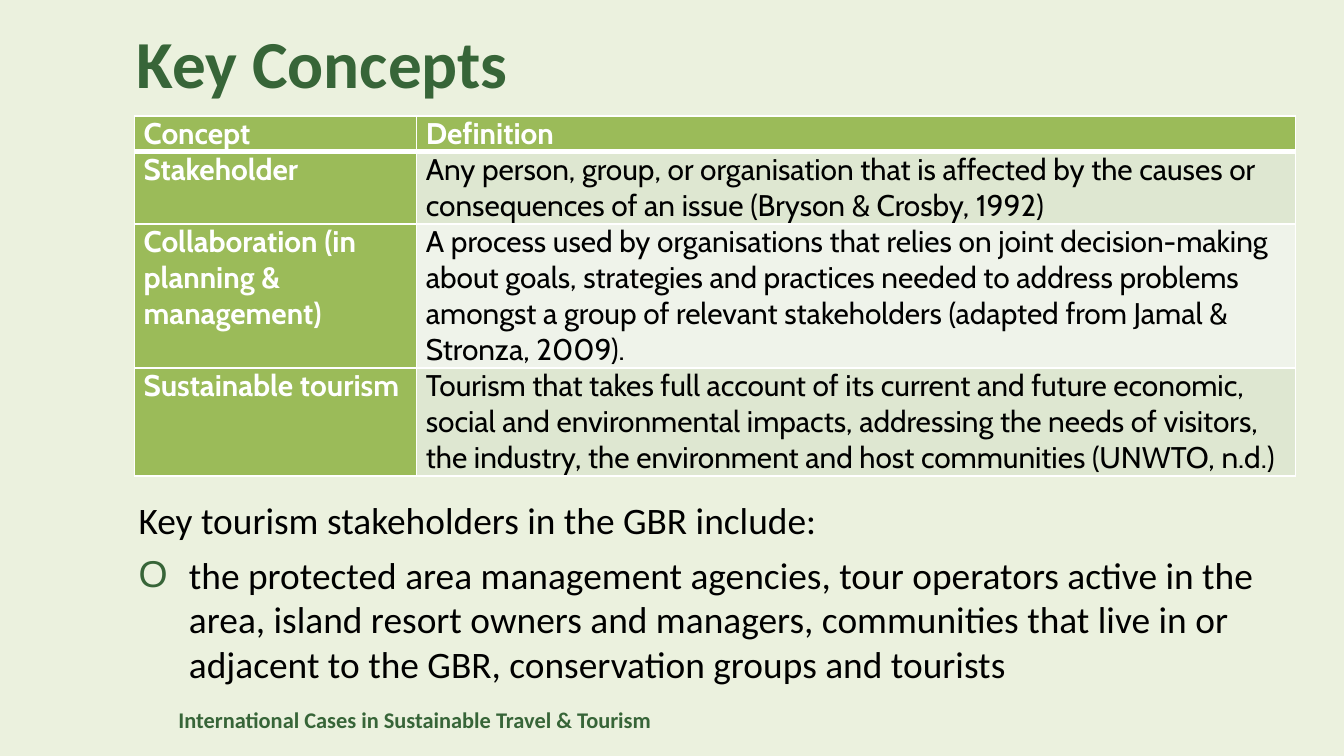
from lxml.etree import SubElement
from pptx import Presentation
from pptx.dml.color import RGBColor
from pptx.enum.text import MSO_ANCHOR, MSO_AUTO_SIZE, PP_ALIGN
from pptx.oxml.ns import qn
from pptx.util import Pt

GREEN, LIME, WHITE, BLACK = "376538", "9BBB59", "FFFFFF", "000000"
BANDS = ["DEE7D1", "EFF3EA"]
LINE = 19.3  # height of one line of table text

# Each row: lines of text, concept, definition
ROWS = [
    (1, "Concept", "Definition"),
    (2, "Stakeholder",
     "Any person, group, or organisation that is affected by the causes or "
     "consequences of an issue (Bryson & Crosby, 1992)"),
    (4, "Collaboration (in planning & management)",
     "A process used by organisations that relies on joint decision-making "
     "about goals, strategies and practices needed to address problems amongst "
     "a group of relevant stakeholders (adapted from Jamal & Stronza, 2009)."),
    (3, "Sustainable tourism",
     "Tourism that takes full account of its current and future economic, social "
     "and environmental impacts, addressing the needs of visitors, the industry, "
     "the environment and host communities (UNWTO, n.d.)"),
]
POINTS = [
    "Key tourism stakeholders in the GBR include:",
    "the protected area management agencies, tour operators active in the area, "
    "island resort owners and managers, communities that live in or adjacent to "
    "the GBR, conservation groups and tourists",
]


def paint(fill, color):
    fill.solid()
    fill.fore_color.rgb = RGBColor.from_string(color)


def style(para, size, color, bold=False, face="Calibri"):
    for run in para.runs:
        font = run.font
        font.name, font.size, font.bold = face, Pt(size), bold
        font.color.rgb = RGBColor.from_string(color)


def place(shape, box):
    shape.left, shape.top, shape.width, shape.height = [Pt(v) for v in box]


def edge(cell, side, width):
    props = cell._tc.get_or_add_tcPr()
    line = SubElement(props, qn("a:" + side), w=str(Pt(width)))
    fill = SubElement(line, qn("a:solidFill"))
    SubElement(fill, qn("a:srgbClr"), val=WHITE)


def add_title(slide, box):
    title = slide.shapes.title
    place(title, box)
    frame = title.text_frame
    frame.text = "Key Concepts"
    frame.auto_size = MSO_AUTO_SIZE.NONE
    frame.vertical_anchor = MSO_ANCHOR.MIDDLE
    para = frame.paragraphs[0]
    para.alignment = PP_ALIGN.LEFT
    style(para, 36, GREEN, True)


def add_grid(slide, box):
    left, top, width, height = [Pt(v) for v in box]
    table = slide.shapes.add_table(len(ROWS), 2, left, top, width, height).table
    first = Pt(151.2)
    table.columns[0].width = first
    table.columns[1].width = width - first
    for r, (lines, *texts) in enumerate(ROWS):
        table.rows[r].height = Pt(lines * LINE)
        for c, text in enumerate(texts):
            cell = table.cell(r, c)
            head = r == 0 or c == 0
            cell.margin_left = cell.margin_right = Pt(5)
            cell.margin_top = cell.margin_bottom = 0
            # Borders come before the fill; a thick rule sits under the header
            for side in ("lnL", "lnR", "lnT", "lnB"):
                thick = (r, side) in ((0, "lnB"), (1, "lnT"))
                edge(cell, side, 3 if thick else 1)
            paint(cell.fill, LIME if head else BANDS[(r - 1) % 2])
            cell.text_frame.text = text
            style(cell.text_frame.paragraphs[0], 16,
                  WHITE if head else BLACK, head, "Cabin")


def add_list(slide, box):
    body = slide.placeholders[1]
    place(body, box)
    frame = body.text_frame
    frame.text = "\n".join(POINTS)
    frame.auto_size = MSO_AUTO_SIZE.NONE
    lead, point = frame.paragraphs
    for para in (lead, point):
        para.space_before = Pt(0 if para is lead else 5)
        style(para, 20, BLACK)
    # Plain lead line
    props = lead._p.get_or_add_pPr()
    props.set("marL", "0")
    props.set("indent", "0")
    SubElement(props, qn("a:buNone"))
    # Hanging green bullet
    props = point._p.get_or_add_pPr()
    props.set("marL", str(Pt(27)))
    props.set("indent", str(-Pt(27)))
    color = SubElement(props, qn("a:buClr"))
    SubElement(color, qn("a:srgbClr"), val=GREEN)
    SubElement(props, qn("a:buFont"), typeface="Arial")
    SubElement(props, qn("a:buChar"), char="O")


def add_footer(slide, box):
    frame = slide.shapes.add_textbox(*[Pt(v) for v in box]).text_frame
    frame.word_wrap = True
    frame.text = "International Cases in Sustainable Travel & Tourism"
    style(frame.paragraphs[0], 12, GREEN, True)


def main():
    deck = Presentation()
    deck.slide_width, deck.slide_height = Pt(720), Pt(405)
    slide = deck.slides.add_slide(deck.slide_layouts[1])
    paint(slide.background.fill, "EBF1DE")
    add_footer(slide, (88.5, 375, 418, 21.6))
    add_title(slide, (66, 13.5, 630, 39))
    add_grid(slide, (72, 62, 622, 193))
    add_list(slide, (67, 263, 653, 93.5))
    deck.save("out.pptx")


if __name__ == "__main__":
    main()
